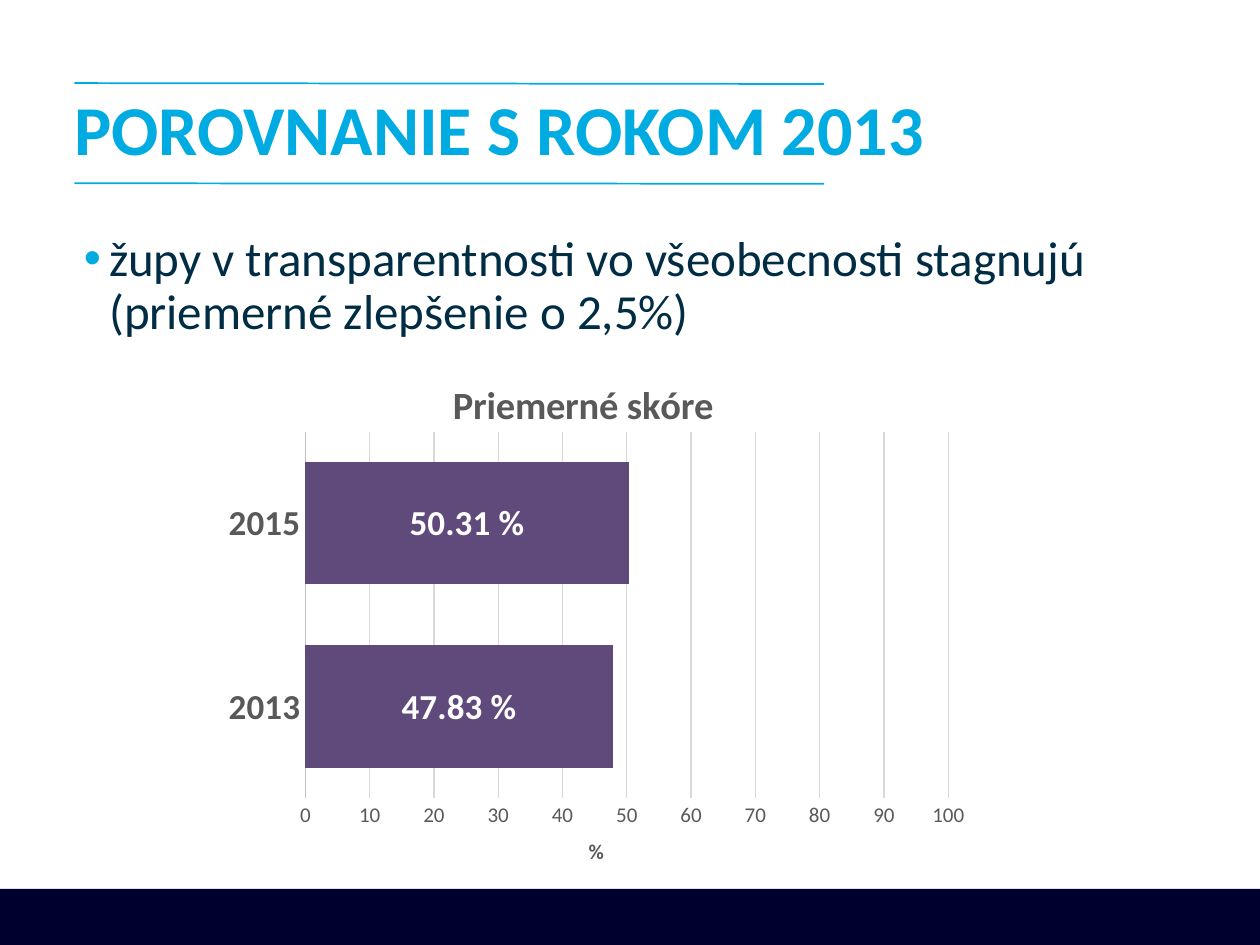
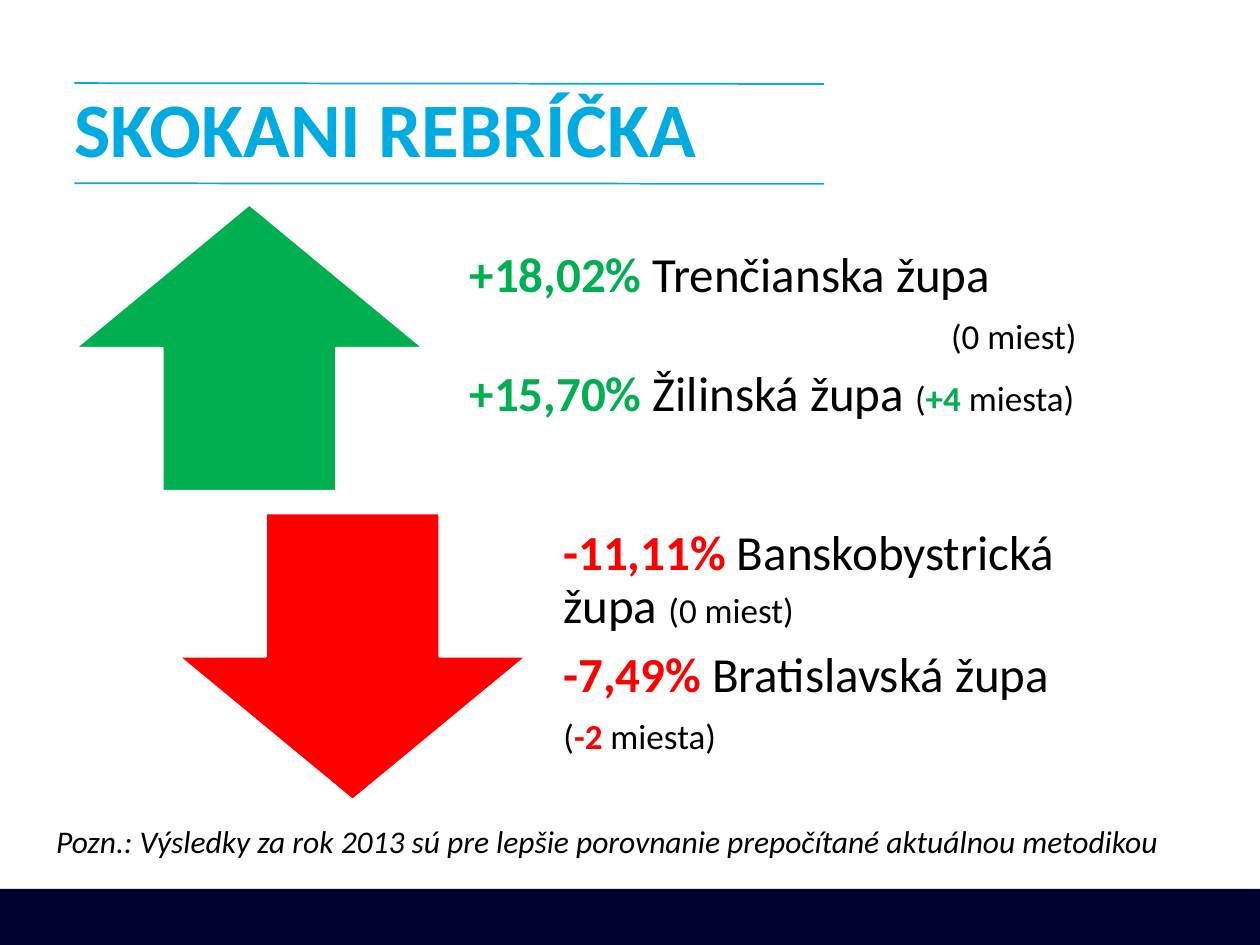
"""Build two slides that compare regional transparency scores with 2013."""
from lxml.etree import SubElement
from pptx import Presentation
from pptx.chart.data import CategoryChartData
from pptx.dml.color import RGBColor
from pptx.enum.chart import XL_CHART_TYPE, XL_LABEL_POSITION, XL_TICK_MARK
from pptx.enum.shapes import MSO_CONNECTOR, MSO_SHAPE
from pptx.enum.text import MSO_ANCHOR, MSO_AUTO_SIZE, PP_ALIGN
from pptx.oxml import parse_xml
from pptx.oxml.ns import nsdecls, qn
from pptx.util import Pt

FACE = "Calibri"
CYAN, NAVY, INK = "00ABE2", "00002E", "002C44"
GREEN, RED, PLUM = "00B050", "FF0000", "604A7B"
BLACK, WHITE, GRAY = "000000", "FFFFFF", "595959"
PALE, MID = "D9D9D9", "BFBFBF"
BIG, SMALL = 28, 20


def color(code):
    return RGBColor.from_string(code)


def style(font, size, code, bold=False, italic=False):
    font.name, font.size = FACE, Pt(size)
    font.bold, font.italic = bold, italic
    font.color.rgb = color(code)


def place(shape, left, top, width, height):
    shape.left, shape.top = Pt(left), Pt(top)
    shape.width, shape.height = Pt(width), Pt(height)


def frame(shape, insets, anchor):
    text = shape.text_frame
    text.word_wrap = True
    text.auto_size = MSO_AUTO_SIZE.NONE
    text.vertical_anchor = anchor
    text.margin_left, text.margin_top, text.margin_right, text.margin_bottom = map(Pt, insets)
    return text


def indent(para, left, first=0):
    props = para._p.get_or_add_pPr()
    props.set("marL", str(Pt(left)))
    props.set("indent", str(Pt(first)))
    return props


def block(slide, kind, box, fill, line=None):
    shape = slide.shapes.add_shape(kind, *map(Pt, box))
    shape.shadow.inherit = False
    shape.fill.solid()
    shape.fill.fore_color.rgb = color(fill)
    if line:
        shape.line.color.rgb = color(line)
        shape.line.width = Pt(1)
    else:
        shape.line.fill.background()


def rule(slide, start, end):
    line = slide.shapes.add_connector(
        MSO_CONNECTOR.STRAIGHT, Pt(42.5), Pt(start), Pt(471), Pt(end))
    line.line.color.rgb = color(CYAN)
    line.line.width = Pt(1)
    SubElement(line._element.spPr, qn("a:effectLst"))


def page(deck, layout, title, size):
    slide = deck.slides.add_slide(deck.slide_layouts[layout])
    block(slide, MSO_SHAPE.RECTANGLE, (0, 508, 720, 32), NAVY)
    rule(slide, 47.5, 48)
    rule(slide, 104.75, 105)
    head = slide.shapes.title
    place(head, 42.5, 44.5, 499, 62.5)
    text = frame(head, (0, 0, 0, 0), MSO_ANCHOR.MIDDLE)
    text.text = title
    para = text.paragraphs[0]
    para.alignment = PP_ALIGN.LEFT
    para.line_spacing = 0.9
    style(para.font, size, CYAN, True)
    return slide


def bullet(shape, words):
    place(shape, 48, 134, 632, 309)
    text = frame(shape, (0, 0, 7.2, 0), MSO_ANCHOR.TOP)
    text.text = words
    para = text.paragraphs[0]
    para.line_spacing, para.space_before = 0.9, Pt(0)
    props = indent(para, 14.4, -14.4)
    tint = SubElement(props, qn("a:buClr"))
    SubElement(tint, qn("a:srgbClr"), val=CYAN)
    SubElement(props, qn("a:buChar"), char="•")
    style(para.font, BIG, INK)


def label(text, words, size):
    text.text = words
    style(text.paragraphs[0].font, size, GRAY, True)


def layout(chart, left, top, width, height):
    area = chart._chartSpace.chart.plotArea
    for old in area.findall(qn("c:layout")):
        area.remove(old)
    area.insert(0, parse_xml(
        f'<c:layout {nsdecls("c")}><c:manualLayout><c:layoutTarget val="inner"/>'
        '<c:xMode val="edge"/><c:yMode val="edge"/>'
        f'<c:x val="{left}"/><c:y val="{top}"/><c:w val="{width}"/><c:h val="{height}"/>'
        '</c:manualLayout></c:layout>'))


def scores(slide):
    data = CategoryChartData()
    data.categories = ["2013", "2015"]
    data.add_series("Priemerné skóre", (47.83, 50.31))
    chart = slide.shapes.add_chart(
        XL_CHART_TYPE.BAR_STACKED, Pt(106.5), Pt(202.5), Pt(453.5), Pt(295), data).chart
    style(chart.font, 10, BLACK)
    chart.has_legend = False
    chart.has_title = True
    label(chart.chart_title.text_frame, "Priemerné skóre", 22)
    chart.chart_title.include_in_layout = False
    layout(chart, 0.15, 0.15, 0.81, 0.71)

    plot = chart.plots[0]
    plot.gap_width, plot.overlap = 50, 100
    plot.vary_by_categories = False
    bars = plot.series[0]
    bars.format.fill.solid()
    bars.format.fill.fore_color.rgb = color(PLUM)
    marks = bars.data_labels
    marks.show_value = True
    marks.number_format, marks.number_format_is_linked = '0.00" %"', False
    marks.position = XL_LABEL_POSITION.CENTER
    style(marks.font, 20, WHITE, True)

    years, scale = chart.category_axis, chart.value_axis
    for axis, size, bold in ((years, 20, True), (scale, 12, False)):
        axis.major_tick_mark = axis.minor_tick_mark = XL_TICK_MARK.NONE
        style(axis.tick_labels.font, size, GRAY, bold)
    years.format.line.color.rgb = color(MID)
    years.format.line.width = Pt(0.75)
    scale.format.line.fill.background()
    scale.minimum_scale, scale.maximum_scale, scale.major_unit = 0, 100, 10
    scale.tick_labels.number_format = "0"
    scale.tick_labels.number_format_is_linked = False
    grid = scale.major_gridlines.format.line
    grid.color.rgb = color(PALE)
    grid.width = Pt(0.75)
    label(scale.axis_title.text_frame, "%", 12)


def ranks(slide, box, rows):
    shape = slide.shapes.add_textbox(*map(Pt, box))
    text = frame(shape, (16, 0, 16, 16), MSO_ANCHOR.MIDDLE)
    for count, (left, after, parts) in enumerate(rows):
        para = text.add_paragraph() if count else text.paragraphs[0]
        indent(para, left)
        para.line_spacing, para.space_after = 0.9, Pt(after)
        for words, size, code in parts:
            run = para.add_run()
            run.text = words
            style(run.font, size, code, code != BLACK)


def note(slide, words):
    shape = slide.shapes.add_textbox(Pt(25), Pt(466), Pt(663), Pt(29))
    text = frame(shape, (7.2, 3.6, 7.2, 3.6), MSO_ANCHOR.TOP)
    text.text = words
    style(text.paragraphs[0].font, 18, BLACK, italic=True)


def main():
    deck = Presentation()
    deck.slide_width, deck.slide_height = Pt(720), Pt(540)

    slide = page(deck, 1, "POROVNANIE S ROKOM 2013", 40)
    bullet(slide.placeholders[1],
           "župy v transparentnosti vo všeobecnosti stagnujú (priemerné zlepšenie o 2,5%)")
    scores(slide)

    slide = page(deck, 5, "SKOKANI REBRÍČKA", 44)
    block(slide, MSO_SHAPE.UP_ARROW, (43.5, 117, 198, 163.5), GREEN, WHITE)
    block(slide, MSO_SHAPE.DOWN_ARROW, (102.5, 293.5, 198, 163.5), RED, WHITE)
    ranks(slide, (233.5, 144.5, 408, 111.5), [
        (19, 9, [("+18,02% ", BIG, GREEN), ("Trenčianska župa", BIG, BLACK)]),
        (294, 7, [("(0 miest)", SMALL, BLACK)]),
        (19, 9, [("+15,70% ", BIG, GREEN), ("Žilinská župa ", BIG, BLACK),
                 ("(", SMALL, BLACK), ("+4", SMALL, GREEN), (" miesta)", SMALL, BLACK)]),
    ])
    ranks(slide, (306, 293.5, 335.5, 163.5), [
        (0, 9, [("-11,11% ", BIG, RED), ("Banskobystrická župa ", BIG, BLACK),
                ("(0 miest)", SMALL, BLACK)]),
        (0, 9, [("-7,49% ", BIG, RED), ("Bratislavská župa", BIG, BLACK)]),
        (0, 7, [("(", SMALL, BLACK), ("-2", SMALL, RED), (" miesta)", SMALL, BLACK)]),
    ])
    note(slide, "Pozn.: Výsledky za rok 2013 sú pre lepšie porovnanie "
                "prepočítané aktuálnou metodikou")
    deck.save("out.pptx")


if __name__ == "__main__":
    main()
